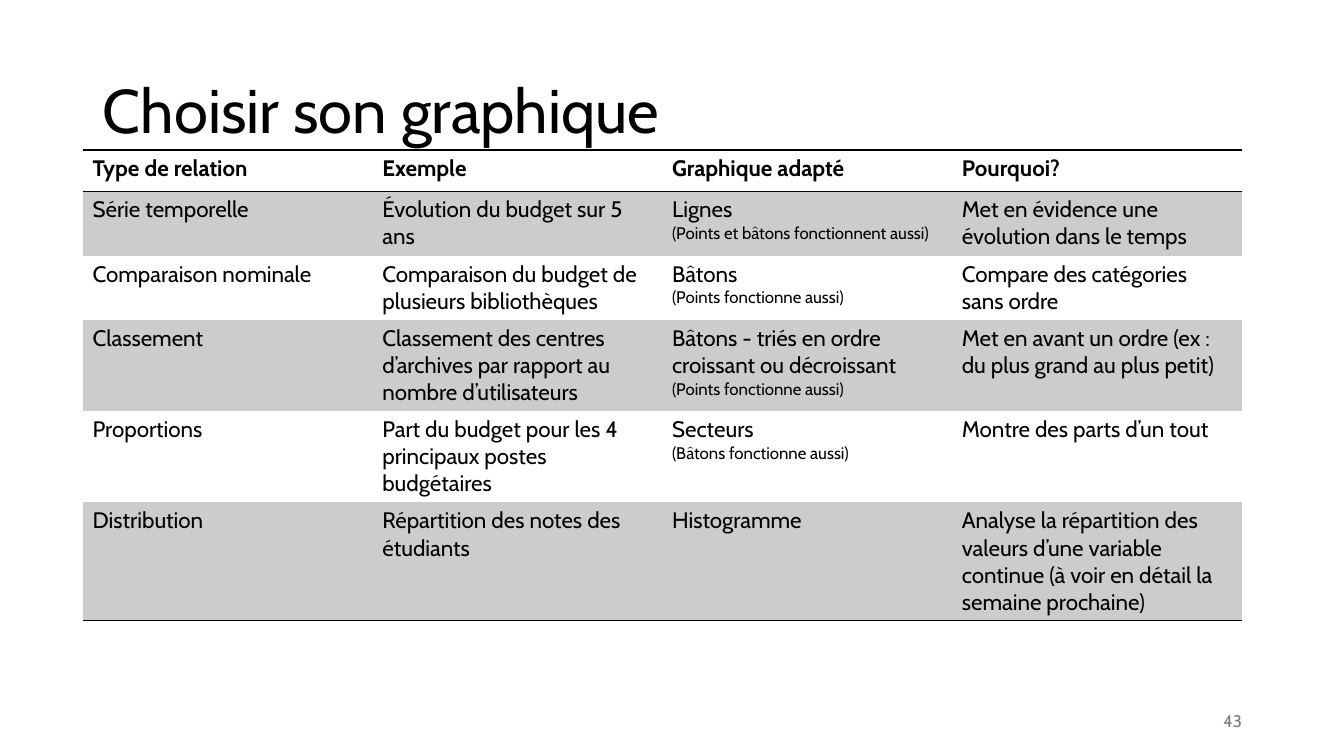
import dataclasses

import lxml.etree
import pptx
import pptx.dml.color
import pptx.enum.text
import pptx.oxml.ns
import pptx.util

Cm = pptx.util.Cm
Pt = pptx.util.Pt
Align = pptx.enum.text.PP_ALIGN
Anchor = pptx.enum.text.MSO_ANCHOR


@dataclasses.dataclass(frozen=True)
class Theme:
    font: str = "Cabin"
    ink: str = "000000"
    band: str = "CCCCCC"
    pale: str = "797979"
    page: str = "FFFFFF"
    head: int = 44
    body: int = 16
    note: int = 12
    rule: int = 1


THEME = Theme()
PLAIN = "{2D5ABB26-0587-4C30-8999-92F81FD0307C}"  # table style without lines or fills

# Each cell holds a main text and, after a line break, an optional note
ROWS = [
    ["Type de relation", "Exemple", "Graphique adapté", "Pourquoi?"],
    ["Série temporelle", "Évolution du budget sur 5 ans",
     "Lignes\n(Points et bâtons fonctionnent aussi)",
     "Met en évidence une évolution dans le temps"],
    ["Comparaison nominale", "Comparaison du budget de plusieurs bibliothèques",
     "Bâtons\n(Points fonctionne aussi)", "Compare des catégories sans ordre"],
    ["Classement",
     "Classement des centres d’archives par rapport au nombre d’utilisateurs",
     "Bâtons - triés en ordre croissant ou décroissant\n(Points fonctionne aussi)",
     "Met en avant un ordre (ex : du plus grand au plus petit)"],
    ["Proportions", "Part du budget pour les 4 principaux postes budgétaires",
     "Secteurs\n(Bâtons fonctionne aussi)", "Montre des parts d’un tout"],
    ["Distribution", "Répartition des notes des étudiants", "Histogramme",
     "Analyse la répartition des valeurs d’une variable continue "
     "(à voir en détail la semaine prochaine)"],
]


def color(code):
    return pptx.dml.color.RGBColor.from_string(code)


def write(para, text, size=THEME.body, ink=THEME.ink, bold=False,
          align=Align.LEFT, space=None):
    run = para.add_run()
    run.text = text
    run.font.name = THEME.font
    run.font.size = Pt(size)
    run.font.bold = bold
    run.font.color.rgb = color(ink)
    para.alignment = align
    if space:
        para.line_spacing = space


def place(shape, left, top, width, height):
    shape.left, shape.top = Cm(left), Cm(top)
    shape.width, shape.height = Cm(width), Cm(height)


def title(slide, text):
    shape = slide.shapes.title
    place(shape, 2.34, 1.02, 29.21, 3.68)
    frame = shape.text_frame
    frame.auto_size = pptx.enum.text.MSO_AUTO_SIZE.NONE
    frame.vertical_anchor = Anchor.MIDDLE
    write(frame.paragraphs[0], text, size=THEME.head, space=0.9)


def border(cell, sides):
    """Draw the given sides (T, B); lines come before the fill in a cell."""
    props = cell._tc.get_or_add_tcPr()
    for spot, side in enumerate(sides):
        line = lxml.etree.Element(pptx.oxml.ns.qn(f"a:ln{side}"), w=str(Pt(THEME.rule)))
        fill = lxml.etree.SubElement(line, pptx.oxml.ns.qn("a:solidFill"))
        lxml.etree.SubElement(fill, pptx.oxml.ns.qn("a:srgbClr"), val=THEME.ink)
        props.insert(spot, line)


def fill_cell(cell, text, bold, band):
    frame = cell.text_frame
    main, *notes = text.split("\n")
    write(frame.paragraphs[0], main, bold=bold)
    for note in notes:
        write(frame.add_paragraph(), note, size=THEME.note)
    if band:
        cell.fill.solid()
        cell.fill.fore_color.rgb = color(THEME.band)
    else:
        cell.fill.background()


def grid(slide, rows):
    high = 1.04
    frame = slide.shapes.add_table(len(rows), len(rows[0]), Cm(2.08), Cm(3.78),
                                   Cm(29.21), Cm(high * len(rows)))
    table = frame.table
    table.horz_banding = False
    table._tbl.tblPr.find(pptx.oxml.ns.qn("a:tableStyleId")).text = PLAIN
    sides = {0: "TB", len(rows) - 1: "B"}
    for r, row in enumerate(rows):
        for c, text in enumerate(row):
            cell = table.cell(r, c)
            fill_cell(cell, text, bold=r == 0, band=r % 2 == 1)
            border(cell, sides.get(r, ""))


def number(slide, text):
    box = slide.shapes.add_textbox(Cm(23.93), Cm(17.65), Cm(7.62), Cm(1.02))
    frame = box.text_frame
    frame.word_wrap = True
    frame.vertical_anchor = Anchor.MIDDLE
    write(frame.paragraphs[0], text, size=THEME.note, ink=THEME.pale, align=Align.RIGHT)


def main():
    deck = pptx.Presentation()
    deck.slide_width, deck.slide_height = Cm(33.87), Cm(19.05)
    slide = deck.slides.add_slide(deck.slide_layouts[5])
    slide.background.fill.solid()
    slide.background.fill.fore_color.rgb = color(THEME.page)

    title(slide, "Choisir son graphique")
    grid(slide, ROWS)
    number(slide, "43")
    deck.save("out.pptx")


if __name__ == "__main__":
    main()
